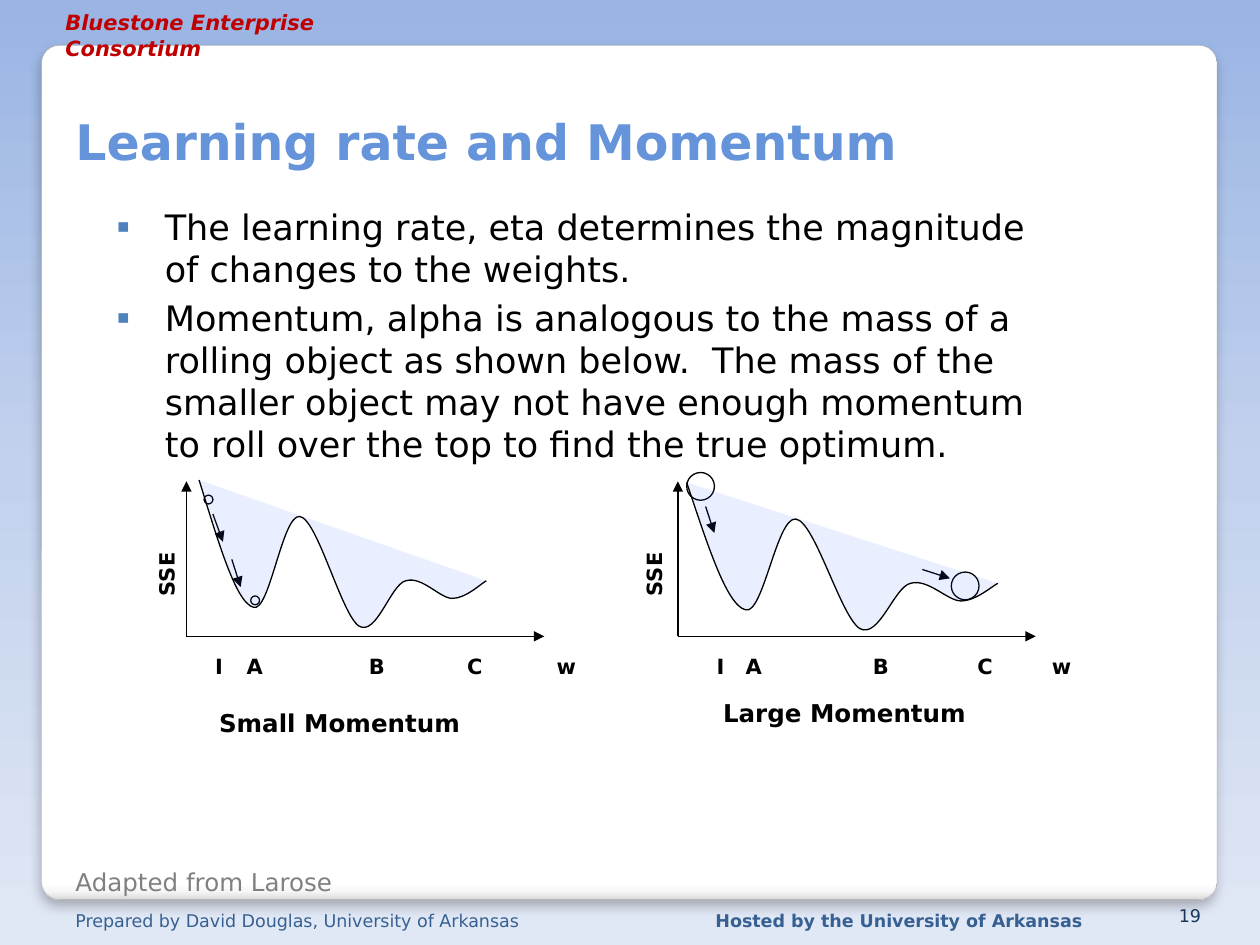
from lxml import etree
from pptx import Presentation
from pptx.dml.color import RGBColor
from pptx.enum import shapes, text
from pptx.oxml import ns, parse_xml
from pptx.util import Inches, Pt

FONT = "DejaVu Sans"
BLACK = "000000"

# Error curve: a start point, then cubic segments (two controls and an end)
CURVE_START = (1.58, 3.81)
CURVE_WIDTH = 2.28
CURVE_POINTS = [
    (1.73, 4.29), (1.87, 4.78), (2.01, 4.82),
    (2.14, 4.87), (2.24, 4.08), (2.38, 4.10),
    (2.52, 4.12), (2.71, 4.88), (2.85, 4.97),
    (2.99, 5.05), (3.10, 4.64), (3.22, 4.61),
    (3.35, 4.57), (3.49, 4.75), (3.59, 4.75),
    (3.70, 4.75), (3.82, 4.63), (3.86, 4.61),
]


def color(value):
    return RGBColor.from_string(value)


def add_xml(parent, tag, **attributes):
    return etree.SubElement(parent, ns.qn(tag), attributes)


def set_gradient(fill, owner, stops):
    """Fill from top to bottom with (percent, colour) stops."""
    fill.gradient()
    fill.gradient_angle = 270
    stop_list = next(owner.iter(ns.qn("a:gsLst")))
    for stop in list(stop_list):
        stop_list.remove(stop)
    for percent, value in stops:
        stop = add_xml(stop_list, "a:gs", pos=str(percent * 1000))
        add_xml(stop, "a:srgbClr", val=value)


def set_line(line, value=BLACK, width=0.75):
    line.color.rgb = color(value)
    line.width = Pt(width)


def add_card(page):
    card = page.shapes.add_shape(shapes.MSO_SHAPE.ROUNDED_RECTANGLE, Inches(0.33),
                                 Inches(0.36), Inches(9.33), Inches(6.78))
    card.adjustments[0] = 0.021
    set_gradient(card.fill, card._element,
                 [(0, "FFFFFF"), (98, "FFFFFF"), (99, "F7F7F7"), (100, "DADADA")])
    set_line(card.line, "A4A4A4", 0.16)
    card._element.spPr.append(parse_xml(
        f'<a:effectLst {ns.nsdecls("a")}><a:outerShdw blurRad="{Pt(6)}" dist="{Pt(4)}" '
        'dir="5400000" rotWithShape="0"><a:srgbClr val="000000"><a:alpha val="25000"/>'
        '</a:srgbClr></a:outerShdw></a:effectLst>'))


def add_text(page, place, lines, size, value=BLACK, bold=False, italic=False,
             wrap=True, grow=False, bottom=False, right=False, rotation=0):
    box = page.shapes.add_textbox(*map(Inches, place))
    box.rotation = rotation
    frame = box.text_frame
    frame.word_wrap = wrap
    if grow:
        frame.auto_size = text.MSO_AUTO_SIZE.SHAPE_TO_FIT_TEXT
    frame.vertical_anchor = text.MSO_ANCHOR.BOTTOM if bottom else text.MSO_ANCHOR.TOP
    frame.text = lines
    for para in frame.paragraphs:
        para.alignment = text.PP_ALIGN.RIGHT if right else text.PP_ALIGN.LEFT
        for span in para.runs:
            font = span.font
            font.name, font.size = FONT, Pt(size)
            font.bold, font.italic = bold, italic
            font.color.rgb = color(value)
    return box


def add_bullets(page, place, items):
    box = add_text(page, place, "\n".join(items), 20)
    for para in box.text_frame.paragraphs:
        para.space_before = Pt(4)
        props = para._p.get_or_add_pPr()
        props.set("marL", str(Inches(0.38)))
        props.set("indent", str(-Inches(0.38)))
        add_xml(add_xml(props, "a:buClr"), "a:srgbClr", val="4F81BD")
        add_xml(props, "a:buSzPct", val="55000")
        add_xml(props, "a:buFont", typeface=FONT)
        add_xml(props, "a:buChar", char="▪")


def add_arrow(page, start, end):
    arrow = page.shapes.add_connector(shapes.MSO_CONNECTOR.STRAIGHT,
                                      *map(Inches, (*start, *end)))
    set_line(arrow.line)
    add_xml(arrow.line._get_or_add_ln(), "a:tailEnd", type="triangle")
    add_xml(arrow._element.spPr, "a:effectLst")


def add_ball(page, left, top, size):
    ball = page.shapes.add_shape(shapes.MSO_SHAPE.OVAL,
                                 *map(Inches, (left, top, size, size)))
    ball.shadow.inherit = False
    ball.fill.background()
    set_line(ball.line)


def bend_segments(shape):
    """Turn each three straight segments into one cubic segment."""
    lines = list(shape._element.spPr.iter(ns.qn("a:lnTo")))
    for index in range(0, len(lines), 3):
        cubic = etree.Element(ns.qn("a:cubicBezTo"))
        lines[index].addprevious(cubic)
        for line in lines[index:index + 3]:
            cubic.append(line[0])
            line.getparent().remove(line)


def add_curve(page, left, top, width):
    """Draw the error curve from (left, top), stretched to the width."""
    x0, y0 = CURVE_START
    stretch = width / CURVE_WIDTH
    points = [(Inches(left + (x - x0) * stretch), Inches(top + y - y0))
              for x, y in CURVE_POINTS]
    builder = page.shapes.build_freeform(Inches(left), Inches(top))
    builder.add_line_segments(points, close=False)
    curve = builder.convert_to_shape()
    bend_segments(curve)
    curve.shadow.inherit = False
    curve.fill.solid()
    curve.fill.fore_color.rgb = color("3366FF")
    tint = next(curve._element.spPr.iter(ns.qn("a:srgbClr")))
    add_xml(tint, "a:alpha", val="10000")
    set_line(curve.line)


def add_plot(page, axis_left, sse_left, marks, caption, caption_place, balls, arrows, curve):
    # Axes
    origin = (axis_left, 5.05)
    add_arrow(page, origin, (axis_left, 3.82))
    add_arrow(page, origin, (axis_left + 2.84, 5.05))
    # Rolling balls and their directions
    for ball in balls:
        add_ball(page, *ball)
    for start, end in arrows:
        add_arrow(page, start, end)
    # Labels
    add_text(page, (sse_left, 4.37, 0.62, 0.3), "SSE", 12, bold=True, grow=True,
             rotation=270)
    for mark, left in zip("IABCw", marks):
        add_text(page, (left, 5.14, 0.33, 0.3), mark, 12, bold=True, grow=True)
    add_text(page, caption_place, caption, 14, bold=True, grow=True)
    add_curve(page, *curve)


def main():
    deck = Presentation()
    deck.slide_width, deck.slide_height = Inches(10), Inches(7.5)
    page = deck.slides.add_slide(deck.slide_layouts[6])

    # Background, card and header
    set_gradient(page.background.fill, page._element,
                 [(0, "9AB5E4"), (50, "C2D1ED"), (100, "E1E8F5")])
    add_card(page)
    add_text(page, (0.42, 0.03, 3.27, 0.3), "Bluestone Enterprise Consortium", 12,
             "C00000", bold=True, italic=True, wrap=False, grow=True)

    # Title and body
    add_text(page, (0.5, 0.25, 8.95, 1.15), "Learning rate and Momentum", 28,
             "6594DA", bold=True, bottom=True)
    add_bullets(page, (0.83, 1.58, 7.75, 4.83), [
        "The learning rate, eta determines the magnitude of changes to the weights.",
        "Momentum, alpha is analogous to the mass of a rolling object as shown below.  "
        "The mass of the smaller object may not have enough momentum to roll over the "
        "top to find the true optimum.",
    ])

    # Source and footer
    add_text(page, (0.5, 6.83, 2.75, 0.34), "Adapted from Larose", 14, "808080", grow=True)
    add_text(page, (0.5, 7.17, 4.46, 0.23),
             "Prepared by David Douglas, University of Arkansas", 10, "376092")
    add_text(page, (5.58, 7.17, 3.42, 0.23), "Hosted by the University of Arkansas",
             10, "376092", bold=True)
    add_text(page, (9.13, 7.17, 0.5, 0.23), "19", 10, "17375E", bottom=True, right=True)

    # Momentum plots
    add_plot(page, 1.48, 1.01, (1.61, 1.86, 2.83, 3.61, 4.32),
             "Small Momentum", (1.64, 5.57, 2.34, 0.34),
             balls=[(1.62, 3.93, 0.07), (1.99, 4.73, 0.07)],
             arrows=[((1.69, 4.08), (1.77, 4.3)), ((1.84, 4.44), (1.91, 4.66))],
             curve=(*CURVE_START, CURVE_WIDTH))
    add_plot(page, 5.38, 4.88, (5.59, 5.82, 6.83, 7.66, 8.25),
             "Large Momentum", (5.64, 5.49, 2.26, 0.34),
             balls=[(5.45, 3.75, 0.22), (7.55, 4.54, 0.22)],
             arrows=[((5.6, 4.02), (5.67, 4.23)), ((7.32, 4.52), (7.54, 4.59))],
             curve=(5.45, 3.83, 2.47))

    deck.save("out.pptx")


if __name__ == "__main__":
    main()
